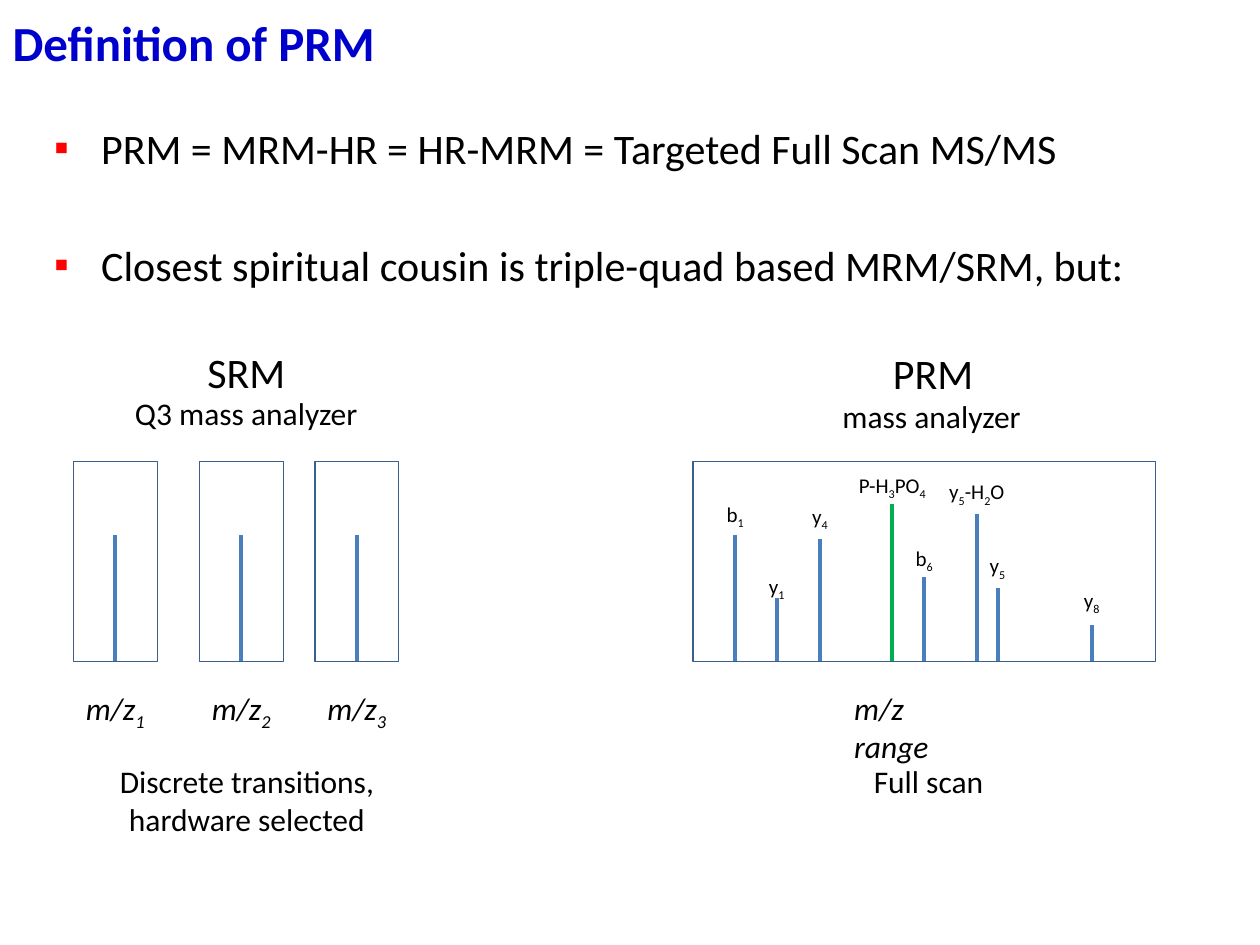
from dataclasses import dataclass

from lxml.etree import SubElement
from pptx import Presentation
from pptx.dml.color import RGBColor
from pptx.enum.shapes import MSO_CONNECTOR, MSO_SHAPE
from pptx.enum.text import MSO_ANCHOR, MSO_AUTO_SIZE, PP_ALIGN
from pptx.oxml.ns import qn
from pptx.util import Cm, Pt

BLACK, TITLE_BLUE, RED = "000000", "0000CC", "FF0000"
FRAME, PEAK, GREEN = "3A5F8C", "4B7EBC", "00B050"
FRAME_TOP, FRAME_H = 9.31, 4.02
BASE = FRAME_TOP + FRAME_H
CELL_W = 1.69


@dataclass
class Label:
    text: str  # an underscore makes the next character a subscript
    left: float
    top: float
    width: float
    height: float
    size: int = 18
    italic: bool = False
    align: PP_ALIGN = PP_ALIGN.CENTER
    wrap: bool = False


@dataclass
class Peak:
    x: float
    height: float
    text: str
    text_top: float
    text_width: float = 0.89
    color: str = PEAK


def rgb(value: str) -> RGBColor:
    return RGBColor.from_string(value)


def add_runs(p, text: str, size: int, color: str = BLACK, **extra) -> None:
    first, *rest = text.split("_")
    pieces = [(first, False)]
    for part in rest:
        pieces += [(part[0], True), (part[1:], False)]
    for piece, is_sub in pieces:
        if not piece:
            continue
        r = p.add_run()
        r.text = piece
        for key, value in {"name": "Calibri", "size": Pt(size), **extra}.items():
            setattr(r.font, key, value)
        r.font.color.rgb = rgb(color)
        if is_sub:
            r._r.get_or_add_rPr().set("baseline", "-25000")


def add_label(s, label: Label) -> None:
    box = s.shapes.add_textbox(Cm(label.left), Cm(label.top),
                               Cm(label.width), Cm(label.height))
    tf = box.text_frame
    tf.word_wrap = label.wrap
    tf.auto_size = MSO_AUTO_SIZE.SHAPE_TO_FIT_TEXT
    p = tf.paragraphs[0]
    p.alignment = label.align
    add_runs(p, label.text, label.size, italic=label.italic)


def add_frame(shapes, left: float, width: float):
    sp = shapes.add_shape(MSO_SHAPE.RECTANGLE, Cm(left), Cm(FRAME_TOP),
                          Cm(width), Cm(FRAME_H))
    sp.shadow.inherit = False
    sp.fill.background()
    sp.line.color.rgb = rgb(FRAME)
    sp.line.width = Pt(0.75)
    return sp


def add_peak(shapes, x: float, height: float, color: str = PEAK, frame=None) -> None:
    line = shapes.add_connector(MSO_CONNECTOR.STRAIGHT, Cm(x), Cm(BASE),
                                Cm(x), Cm(BASE - height))
    if frame is not None:
        line.begin_connect(frame, 2)
    line.line.color.rgb = rgb(color)
    line.line.width = Pt(2.25)
    SubElement(line._element.spPr, qn("a:effectLst"))


def add_bullet(p, text: str) -> None:
    pPr = p._p.get_or_add_pPr()
    pPr.set("marL", str(Cm(0.95)))
    pPr.set("indent", str(-Cm(0.95)))
    SubElement(SubElement(pPr, qn("a:buClr")), qn("a:srgbClr")).set("val", RED)
    SubElement(pPr, qn("a:buFont")).set("typeface", "Arial")
    SubElement(pPr, qn("a:buChar")).set("char", "▪")
    add_runs(p, text, 24)


BULLETS = [
    "PRM = MRM-HR = HR-MRM = Targeted Full Scan MS/MS",
    "Closest spiritual cousin is triple-quad based MRM/SRM, but:",
]
CELL_LEFTS = [1.48, 4.02, 6.35]
PEAKS = [
    Peak(14.82, 2.54, "b_1", 9.98),
    Peak(15.66, 1.27, "y_1", 11.43),
    Peak(16.53, 2.46, "y_4", 10.03),
    Peak(17.99, 3.18, "P-H_3PO_4", 9.4, 1.93, GREEN),
    Peak(18.63, 1.69, "b_6", 10.87),
    Peak(19.69, 2.96, "y_5-H_2O", 9.53, 1.68),
    Peak(20.11, 1.48, "y_5", 11.02),
    Peak(22.01, 0.74, "y_8", 11.71),
]
LABELS = [
    Label("SRM", 3.91, 6.86, 2.11, 1.27, 24),
    Label("Q3 mass analyzer", 2.44, 7.82, 5.05, 1.02),
    Label("PRM", 17.73, 6.88, 2.16, 1.27, 24),
    Label("mass analyzer", 16.71, 7.87, 4.14, 1.02),
    Label("m/z range", 16.97, 13.77, 3.12, 1.02, italic=True, align=PP_ALIGN.LEFT),
    Label("Discrete transitions, hardware selected", 1.07, 15.24, 7.82, 1.8, wrap=True),
    Label("Full scan", 14.81, 15.24, 7.82, 1.02, wrap=True),
]


def main() -> None:
    prs = Presentation()
    prs.slide_width, prs.slide_height = Cm(25.4), Cm(19.05)
    s = prs.slides.add_slide(prs.slide_layouts[5])

    # Title
    title = s.shapes.title
    title.left, title.top, title.width, title.height = Cm(0), Cm(0), Cm(24.56), Cm(1.7)
    tf = title.text_frame
    tf.auto_size = MSO_AUTO_SIZE.NONE
    tf.vertical_anchor = MSO_ANCHOR.MIDDLE
    p = tf.paragraphs[0]
    p.alignment = PP_ALIGN.LEFT
    add_runs(p, "Definition of PRM", 28, TITLE_BLUE, bold=True)

    # Bullets
    tf = s.shapes.add_textbox(Cm(0.84), Cm(2.34), Cm(23.93), Cm(4)).text_frame
    tf.word_wrap = True
    for i, text in enumerate(BULLETS):
        p = tf.add_paragraph() if i else tf.paragraphs[0]
        add_bullet(p, text)
        if i:
            p.space_before = Pt(38)

    # SRM: one cell per discrete transition
    for number, left in enumerate(CELL_LEFTS, 1):
        group = s.shapes.add_group_shape()
        cell = add_frame(group.shapes, left, CELL_W)
        add_peak(group.shapes, left + CELL_W / 2, 2.54, frame=cell)
        add_label(s, Label(f"m/z_{number}", left, 13.77, 1.75, 1.02,
                           italic=True, align=PP_ALIGN.LEFT))

    # PRM: full spectrum, with each label centred over its peak
    spectrum = add_frame(s.shapes, 13.97, 9.32)
    for peak in PEAKS:
        joined = spectrum if peak.text == "b_6" else None
        add_peak(s.shapes, peak.x, peak.height, peak.color, joined)
        add_label(s, Label(peak.text, peak.x - peak.text_width / 2, peak.text_top,
                           peak.text_width, 0.76, 12))

    # Headings and captions
    for label in LABELS:
        add_label(s, label)

    prs.save("out.pptx")


if __name__ == "__main__":
    main()
